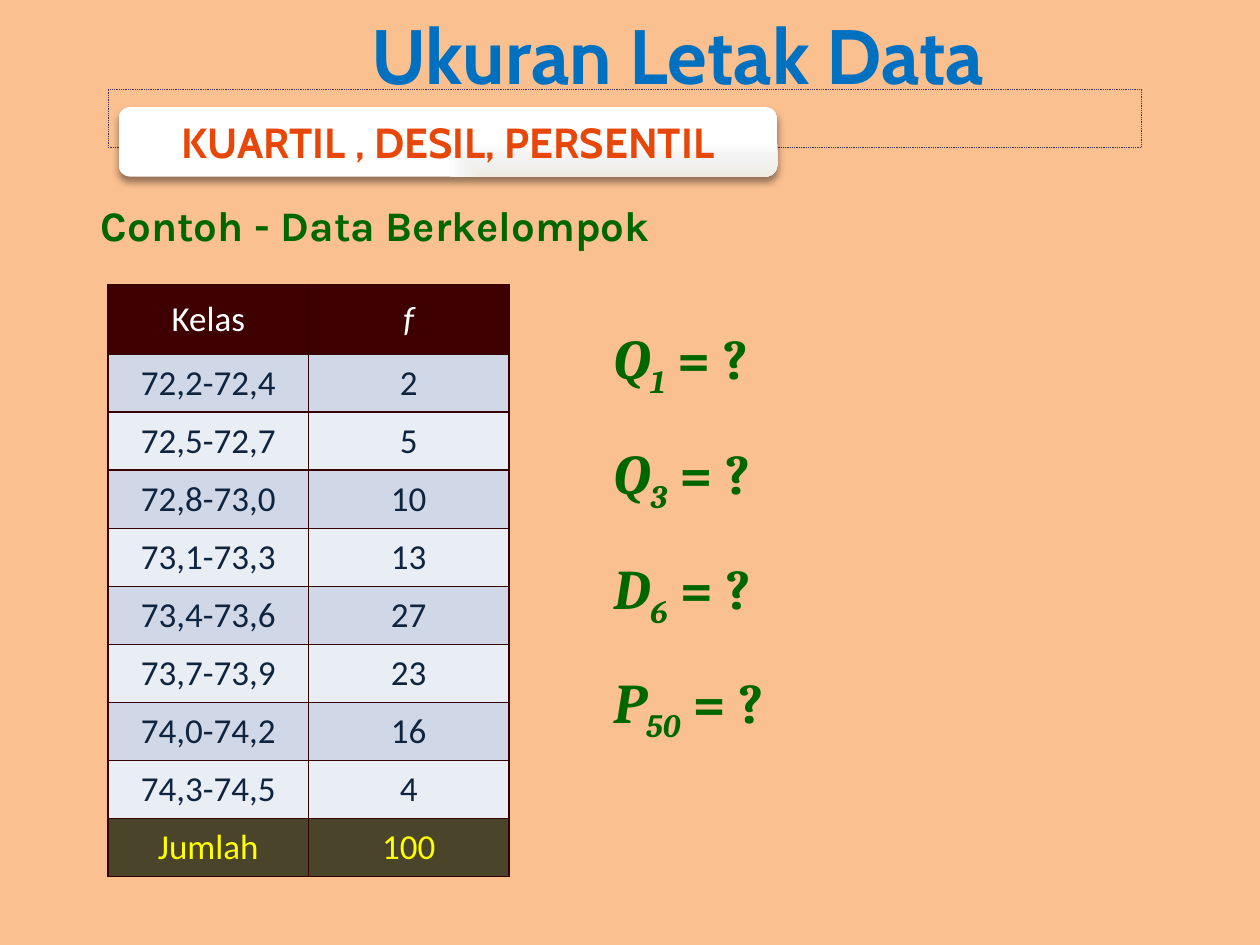
from lxml.etree import SubElement
from pptx import Presentation
from pptx.dml.color import RGBColor
from pptx.enum.dml import MSO_LINE
from pptx.enum.shapes import MSO_SHAPE
from pptx.enum.text import MSO_ANCHOR, MSO_AUTO_SIZE, PP_ALIGN
from pptx.oxml import parse_xml
from pptx.oxml.ns import nsdecls, qn
from pptx.util import Cm, Pt

TITLE = "Ukuran Letak Data"
TOPIC = "KUARTIL , DESIL, PERSENTIL"
EXAMPLE = "Contoh - Data Berkelompok"
FREQUENCIES = [
    ("Kelas", "f"),
    ("72,2-72,4", "2"),
    ("72,5-72,7", "5"),
    ("72,8-73,0", "10"),
    ("73,1-73,3", "13"),
    ("73,4-73,6", "27"),
    ("73,7-73,9", "23"),
    ("74,0-74,2", "16"),
    ("74,3-74,5", "4"),
    ("Jumlah", "100"),
]
QUESTIONS = [("Q", "1"), ("Q", "3"), ("D", "6"), ("P", "50")]

GREEN = "006600"
BORDER = "360000"
HEADER_STYLE = ("3E0000", "FFFFFF")
BAND_STYLES = [("E9EDF4", "0F243E"), ("D0D8E8", "0F243E")]
TOTAL_STYLE = ("4A452A", "FFFF00")
TOPIC_STOPS = [(0, "EEECE1"), (50, "F2F2F2"), (100, "FFFFFF")]
COLUMN_WIDTH, HEADER_HEIGHT, ROW_HEIGHT = 4.04, 1.4, 1.17


def rgb(value):
    return RGBColor.from_string(value)


def box(left, top, width, height):
    return Cm(left), Cm(top), Cm(width), Cm(height)


def style(run, font, size, color, bold=False, italic=False):
    run.font.name = font
    run.font.size = Pt(size)
    run.font.color.rgb = rgb(color)
    run.font.bold = bold
    run.font.italic = italic


def write(frame, text, *look, align=PP_ALIGN.CENTER):
    frame.text = text
    paragraph = frame.paragraphs[0]
    paragraph.alignment = align
    style(paragraph.runs[0], *look)
    return paragraph.runs[0]


def line_xml(tag, color):
    return parse_xml(
        f'<a:{tag} {nsdecls("a")} w="12700"><a:solidFill>'
        f'<a:srgbClr val="{color}"/></a:solidFill></a:{tag}>'
    )


def add_title(slide):
    title = slide.shapes.title
    title.left, title.top, title.width, title.height = box(2.21, 0, 22.91, 2.18)
    title.text_frame.vertical_anchor = MSO_ANCHOR.MIDDLE
    run = write(title.text_frame, TITLE, "Cabin", 44, "0070C0", True)
    run.font._element.insert(0, line_xml("ln", "FFFFFF"))


def add_frame(slide):
    frame = slide.shapes.add_shape(MSO_SHAPE.RECTANGLE, *box(2.18, 1.8, 20.83, 1.17))
    frame.shadow.inherit = False
    frame.fill.background()
    frame.line.color.rgb = rgb("403152")
    frame.line.width = Pt(0.5)
    frame.line.dash_style = MSO_LINE.ROUND_DOT


def add_topic(slide):
    topic = slide.shapes.add_shape(
        MSO_SHAPE.ROUNDED_RECTANGLE, *box(2.39, 2.16, 13.28, 1.4)
    )
    topic.line.fill.background()
    topic.shadow.inherit = False
    stops = "".join(
        f'<a:gs pos="{position * 1000}"><a:srgbClr val="{color}"/></a:gs>'
        for position, color in TOPIC_STOPS
    )
    properties = topic._element.spPr
    properties.find(qn("a:prstGeom")).addnext(parse_xml(
        f'<a:gradFill {nsdecls("a")} rotWithShape="1"><a:gsLst>{stops}</a:gsLst>'
        '<a:path path="rect"><a:fillToRect l="100000" t="100000"/></a:path>'
        '</a:gradFill>'
    ))
    shadow = SubElement(
        properties.find(qn("a:effectLst")), qn("a:outerShdw"),
        blurRad=str(Pt(4)), dist=str(Pt(3)), dir="5400000", rotWithShape="0",
    )
    shade = SubElement(shadow, qn("a:srgbClr"), val="000000")
    SubElement(shade, qn("a:alpha"), val="40000")
    topic.text_frame.vertical_anchor = MSO_ANCHOR.MIDDLE
    write(topic.text_frame, TOPIC, "Cabin", 24, "E74709", True)


def add_example(slide):
    example = slide.shapes.add_textbox(*box(1.78, 3.89, 12.78, 1.27)).text_frame
    example.word_wrap = False
    example.auto_size = MSO_AUTO_SIZE.SHAPE_TO_FIT_TEXT
    write(example, EXAMPLE, "Karla", 24, GREEN, True, align=PP_ALIGN.LEFT)


def add_frequencies(slide):
    last = len(FREQUENCIES) - 1
    height = HEADER_HEIGHT + last * ROW_HEIGHT
    table = slide.shapes.add_table(
        last + 1, 2, *box(2.18, 5.74, 2 * COLUMN_WIDTH, height)
    ).table
    for column in table.columns:
        column.width = Cm(COLUMN_WIDTH)
    for index, values in enumerate(FREQUENCIES):
        table.rows[index].height = Cm(ROW_HEIGHT if index else HEADER_HEIGHT)
        special = {0: HEADER_STYLE, last: TOTAL_STYLE}
        fill, color = special.get(index, BAND_STYLES[index % 2])
        for cell, value in zip(table.rows[index].cells, values):
            cell.fill.solid()
            cell.fill.fore_color.rgb = rgb(fill)
            cell.vertical_anchor = MSO_ANCHOR.MIDDLE
            cell.margin_left = cell.margin_right = Cm(0.18)
            cell.margin_top = cell.margin_bottom = Cm(0.1)
            write(cell.text_frame, value, "Calibri", 20, color, False, value == "f")
            for place, side in enumerate(("lnL", "lnR", "lnT", "lnB")):
                cell._tc.tcPr.insert(place, line_xml(side, BORDER))


def add_questions(slide):
    frame = slide.shapes.add_textbox(*box(12.12, 6.15, 4.29, 8.46)).text_frame
    frame.word_wrap = True
    frame.auto_size = MSO_AUTO_SIZE.SHAPE_TO_FIT_TEXT
    frame.vertical_anchor = MSO_ANCHOR.MIDDLE
    for index, (measure, order) in enumerate(QUESTIONS):
        paragraph = frame.add_paragraph() if index else frame.paragraphs[0]
        paragraph.line_spacing = 1.5
        for text in (measure, order, " = ?"):
            run = paragraph.add_run()
            run.text = text
            style(run, "Cambria", 32, GREEN, True, text != " = ?")
        paragraph.runs[1].font._element.set("baseline", "-25000")


def main():
    deck = Presentation()
    deck.slide_width, deck.slide_height = Cm(25.4), Cm(19.05)
    slide = deck.slides.add_slide(deck.slide_layouts[5])
    slide.background.fill.solid()
    slide.background.fill.fore_color.rgb = rgb("FAC090")
    for add_part in (add_title, add_frame, add_topic, add_example,
                     add_frequencies, add_questions):
        add_part(slide)
    deck.save("out.pptx")


if __name__ == "__main__":
    main()
